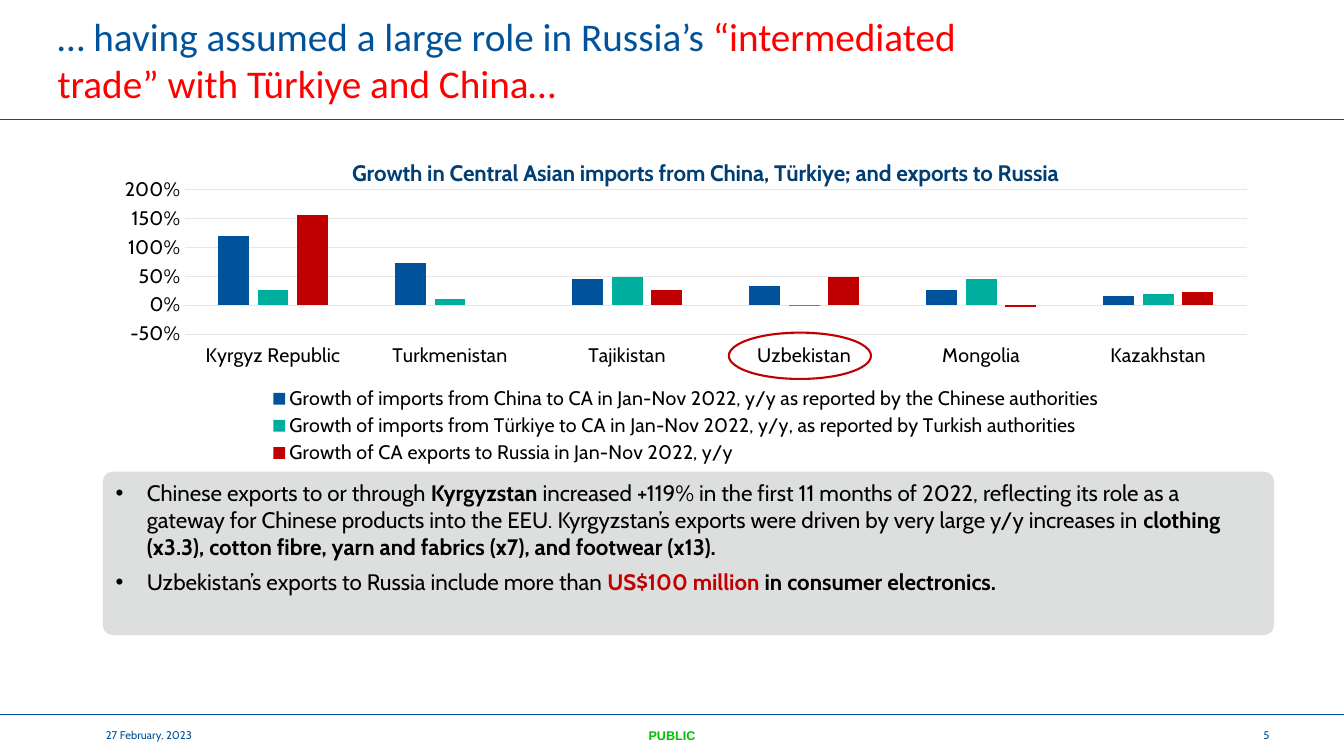
from lxml import etree
from pptx import Presentation
from pptx.chart.data import CategoryChartData
from pptx.dml.color import RGBColor
from pptx.enum.chart import (XL_CHART_TYPE as ChartType, XL_LEGEND_POSITION as LegendPosition,
                             XL_TICK_LABEL_POSITION as LabelPosition, XL_TICK_MARK as TickMark)
from pptx.enum.shapes import MSO_CONNECTOR as Connector, MSO_SHAPE as Shape
from pptx.enum.text import MSO_ANCHOR as Anchor, PP_ALIGN as Align
from pptx.oxml.ns import qn
from pptx.util import Inches, Pt

BLUE, NAVY, RED, TEAL = "00539B", "003E74", "C00000", "00AE9E"
BLACK, PALE, GRID = "000000", "DDDEDE", "E6E6E7"


def color(code):
    return RGBColor.from_string(code)


def style_font(font, face="Cabin", size=14, ink=BLACK, bold=False):
    font.name, font.size, font.bold = face, Pt(size), bold
    font.color.rgb = color(ink)


def write(para, text, **style):
    """Add one span of text to a paragraph in the given style."""
    span = para.add_run()
    span.text = text
    style_font(span.font, **style)


def add_bullet(para, indent=0.31):
    props = para._p.get_or_add_pPr()
    props.set("marL", str(Inches(indent)))
    props.set("indent", str(-Inches(indent)))
    etree.SubElement(props, qn("a:buFont")).set("typeface", "Arial")
    etree.SubElement(props, qn("a:buChar")).set("char", "•")


def place(part, index, **shares):
    """Give a chart part a fixed position, in shares of the chart."""
    for old in part.findall(qn("c:layout")):
        part.remove(old)
    layout = etree.Element(qn("c:layout"))
    manual = etree.SubElement(layout, qn("c:manualLayout"))
    if "plotArea" in part.tag:
        etree.SubElement(manual, qn("c:layoutTarget")).set("val", "inner")
    for side in "xy":
        etree.SubElement(manual, qn(f"c:{side}Mode")).set("val", "edge")
    for side, share in shares.items():
        etree.SubElement(manual, qn(f"c:{side}")).set("val", str(share))
    part.insert(index, layout)


class Page:
    """The current slide; all lengths are percentages of its size."""

    def __init__(self, deck):
        self.width, self.height = deck.slide_width, deck.slide_height
        self.shapes = deck.slides.add_slide(deck.slide_layouts[6]).shapes

    def area(self, left, top, width, height):
        return [int(share * full / 100) for share, full in
                zip((left, top, width, height), (self.width, self.height) * 2)]

    def rule(self, top):
        _, y, right, _ = self.area(0, top, 100, 0)
        line = self.shapes.add_connector(Connector.STRAIGHT, 0, y, right, y)
        line.line.color.rgb = color("005198")
        line.line.width = Pt(0.25)
        etree.SubElement(line._element.spPr, qn("a:effectLst"))

    def text(self, area, spans, align=Align.LEFT, **style):
        frame = self.shapes.add_textbox(*self.area(*area)).text_frame
        frame.word_wrap = True
        frame.vertical_anchor = Anchor.MIDDLE
        frame.margin_left = frame.margin_right = frame.margin_top = frame.margin_bottom = 0
        para = frame.paragraphs[0]
        para.alignment = align
        for text, extra in spans:
            write(para, text, **{**style, **extra})

    def shape(self, kind, area, fill=None, line=None):
        shape = self.shapes.add_shape(kind, *self.area(*area))
        shape.shadow.inherit = False
        if fill:
            shape.fill.solid()
            shape.fill.fore_color.rgb = color(fill)
        else:
            shape.fill.background()
        if line:
            shape.line.color.rgb = color(line)
            shape.line.width = Pt(1.5)
        else:
            shape.line.fill.background()
        return shape

    def bullet_panel(self, area, bullets):
        panel = self.shape(Shape.ROUNDED_RECTANGLE, area, fill=PALE)
        panel.adjustments[0] = 0.06
        frame = panel.text_frame
        frame.word_wrap = True
        frame.vertical_anchor = Anchor.TOP
        for number, spans in enumerate(bullets):
            para = frame.add_paragraph() if number else frame.paragraphs[0]
            para.alignment = Align.LEFT
            para.space_after = Pt(6)
            add_bullet(para)
            for text, extra in spans:
                write(para, text, size=16, **extra)

    def column_chart(self, area, title, categories, series):
        data = CategoryChartData(number_format="0%")
        data.categories = categories
        for name, values, _ in series:
            data.add_series(name, values)
        chart = self.shapes.add_chart(ChartType.COLUMN_CLUSTERED, *self.area(*area), data).chart
        style_font(chart.font)

        # Title and legend
        chart.has_title = True
        write(chart.chart_title.text_frame.paragraphs[0], title, size=16, ink=NAVY, bold=True)
        chart.has_legend = True
        chart.legend.position = LegendPosition.BOTTOM
        chart.legend.include_in_layout = False
        style_font(chart.legend.font)

        # Columns
        plot = chart.plots[0]
        plot.gap_width, plot.overlap, plot.vary_by_categories = 219, -27, False
        for column, (_, _, fill) in zip(plot.series, series):
            column.invert_if_negative = False
            column.format.fill.solid()
            column.format.fill.fore_color.rgb = color(fill)

        # Axes
        names, scale = chart.category_axis, chart.value_axis
        for axis in (names, scale):
            axis.major_tick_mark = axis.minor_tick_mark = TickMark.NONE
            style_font(axis.tick_labels.font)
        names.tick_label_position = LabelPosition.LOW
        scale.minimum_scale, scale.maximum_scale, scale.major_unit = -0.5, 2, 0.5
        scale.tick_labels.number_format = "0%"
        scale.tick_labels.number_format_is_linked = False
        scale.format.line.fill.background()
        for line in (names.format.line, scale.major_gridlines.format.line):
            line.color.rgb = color(GRID)
            line.width = Pt(0.75)

        # Positions inside the chart
        find = chart.element.xpath
        place(find("c:chart/c:title")[0], 1, x=0.21, y=0.1)
        place(find("c:chart/c:plotArea")[0], 0, x=0.07, y=0.2, w=0.91, h=0.41)
        place(find("c:chart/c:legend")[0], 1, x=0.14, y=0.75, w=0.72, h=0.24)


def main():
    deck = Presentation()
    deck.slide_width, deck.slide_height = Inches(13.33), Inches(7.5)
    page = Page(deck)
    header, footer = 15.73, 94.53

    # Frame lines and title
    page.rule(header)
    page.rule(footer)
    page.text((4.28, 0, 68.2, header),
              [("… having assumed a large role in Russia’s ", {}),
               ("“intermediated trade” with Türkiye and China…", {"ink": "FF0000"})],
              face="Calibri", size=28, ink=BLUE)

    # Bullet panel
    bold = {"bold": True}
    page.bullet_panel((7.65, 62.4, 87.15, 21.6), [
        [("Chinese exports to or through ", {}), ("Kyrgyzstan ", bold),
         ("increased +119% in the first 11 months of 2022, reflecting its role as a gateway for "
          "Chinese products into the EEU. Kyrgyzstan’s exports were driven by very large y/y "
          "increases in ", {}),
         ("clothing (x3.3), cotton fibre, yarn and fabrics (x7), and footwear (x13).", bold)],
        [("Uzbekistan’s exports to Russia include more than ", {}),
         ("US$100 million ", {"ink": RED, "bold": True}), ("in consumer electronics.", bold)]])

    # Chart, with Uzbekistan circled
    page.column_chart(
        (7.65, header, 86.85, 46.67),
        "Growth in Central Asian imports from China, Türkiye; and exports to Russia",
        ["Kyrgyz Republic", "Turkmenistan", "Tajikistan", "Uzbekistan", "Mongolia", "Kazakhstan"],
        [("Growth of imports from China to CA in Jan-Nov 2022, y/y as reported by the Chinese "
          "authorities", (1.19, 0.72, 0.46, 0.33, 0.26, 0.16), BLUE),
         ("Growth of imports from Türkiye to CA in Jan-Nov 2022, y/y, as reported by Turkish "
          "authorities", (0.27, 0.1, 0.49, 0.01, 0.46, 0.19), TEAL),
         ("Growth of CA exports to Russia in Jan-Nov 2022, y/y",
          (1.56, None, 0.26, 0.49, -0.03, 0.23), RED)])
    page.shape(Shape.OVAL, (54.23, 44, 10.58, 6.13), line=RED)

    # Footer
    depth = 100 - footer
    page.text((7.88, footer, 20.48, depth), [("27 February, 2023", {})], size=8, ink=BLUE)
    page.text((90.55, footer, 3.9, depth), [("5", {})], Align.RIGHT, size=8, ink=BLUE)
    page.text((0, footer, 100, depth), [("PUBLIC", {})], Align.CENTER,
              face="Arial", size=9, ink="00C000", bold=True)

    deck.save("out.pptx")


if __name__ == "__main__":
    main()
